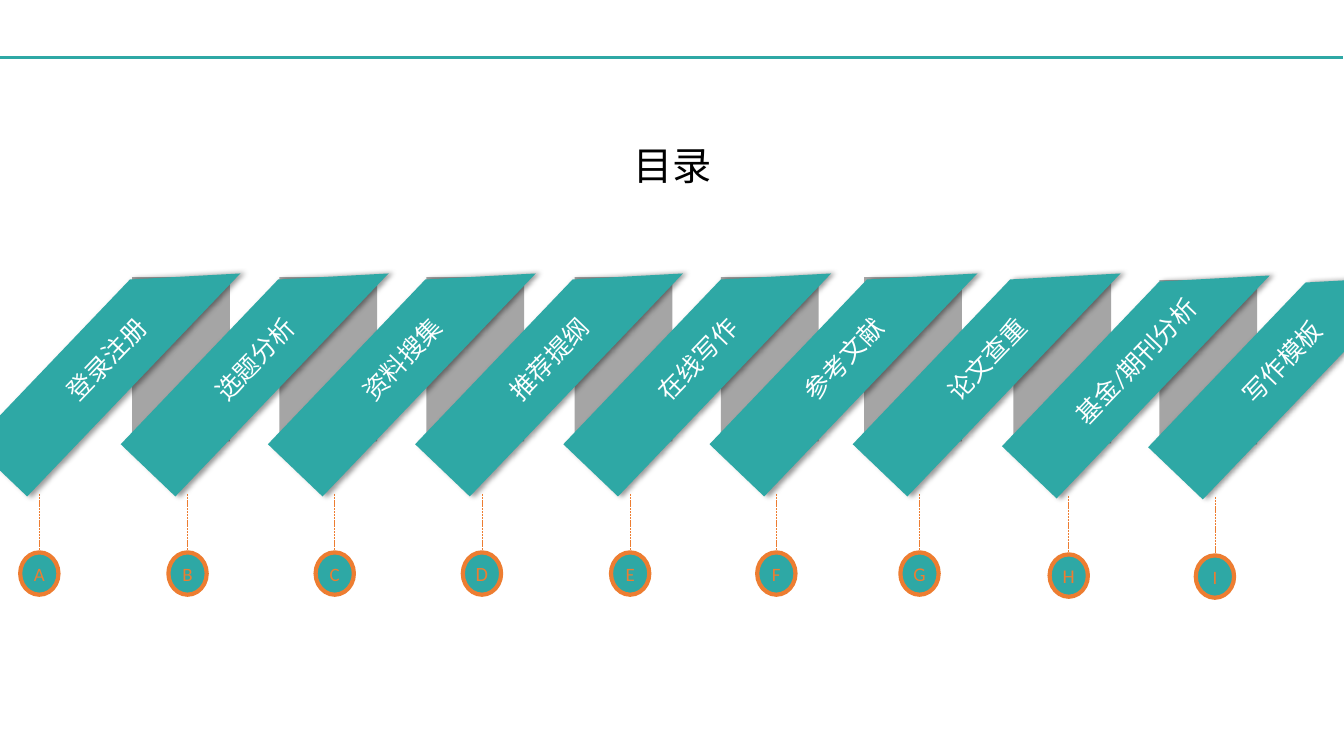
import lxml.etree
import pptx
import pptx.util
import pptx.dml.color
import pptx.enum.dml
import pptx.enum.shapes
import pptx.enum.text
import pptx.oxml.ns

Inches = pptx.util.Inches
Pt = pptx.util.Pt
SHAPE = pptx.enum.shapes.MSO_SHAPE
qn = pptx.oxml.ns.qn

TITLE = "目录"
CHAPTERS = [
    ("A", "登录注册", 0.2, 0, 13.5),
    ("B", "选题分析", 1.67, 0, 13.5),
    ("C", "资料搜集", 3.13, 0, 13.5),
    ("D", "推荐提纲", 4.59, 0, 14.4),
    ("E", "在线写作", 6.06, 0, 13.5),
    ("F", "参考文献", 7.51, 0, 13.5),
    ("G", "论文查重", 8.93, 0, 13.9),
    ("H", "基金/期刊分析", 10.41, 0.02, 13.9),
    ("I", "写作模板", 11.86, 0.03, 13.5),
]
THEME = {
    "font": "Calibri", "teal": "2EA8A5", "orange": "ED7D31", "gray": "A5A5A5",
    "title": "000000", "label": "FEFFFF", "shadow": "000000",
    "title_size": 28, "label_size": 18,
}
STRIP = [(0, 0.8), (0.75, 0), (0.75, 3.06), (0, 3.06)]
STRIP_ANGLE = 43.7


def rgb(name):
    return pptx.dml.color.RGBColor.from_string(THEME[name])


def write(sp, text, size, color):
    tf = sp.text_frame
    tf.text = text
    tf.word_wrap = True
    tf.vertical_anchor = pptx.enum.text.MSO_ANCHOR.MIDDLE
    tf.margin_left = tf.margin_right = tf.margin_top = tf.margin_bottom = 0
    p = tf.paragraphs[0]
    p.alignment = pptx.enum.text.PP_ALIGN.CENTER
    font = p.runs[0].font
    font.name = THEME["font"]
    font.size = Pt(size)
    font.color.rgb = rgb(color)
    return p


def paint(sp, fill, line=None, width=0):
    sp.shadow.inherit = False
    sp.fill.solid()
    sp.fill.fore_color.rgb = rgb(fill)
    if line:
        sp.line.color.rgb = rgb(line)
        sp.line.width = Pt(width)
    else:
        sp.line.fill.background()


def add_line(shapes, x1, y1, x2, y2, color, width):
    ln = shapes.add_connector(pptx.enum.shapes.MSO_CONNECTOR.STRAIGHT,
                              Inches(x1), Inches(y1), Inches(x2), Inches(y2))
    ln.line.color.rgb = rgb(color)
    ln.line.width = Pt(width)
    lxml.etree.SubElement(ln.element.spPr, qn("a:effectLst"))
    return ln


def add_shadow(sp):
    effects = sp.element.spPr.find(qn("a:effectLst"))
    shadow = lxml.etree.SubElement(effects, qn("a:outerShdw"), blurRad=str(Pt(4)),
                                   dist=str(Pt(3)), dir="0", rotWithShape="0")
    color = lxml.etree.SubElement(shadow, qn("a:srgbClr"), val=THEME["shadow"])
    lxml.etree.SubElement(color, qn("a:alpha"), val="40000")


def add_strip(shapes, x, y, text):
    points = [(Inches(x + dx), Inches(y + dy)) for dx, dy in STRIP]
    builder = shapes.build_freeform(*points[0])
    builder.add_line_segments(points[1:], close=True)
    sp = builder.convert_to_shape()
    sp.rotation = STRIP_ANGLE
    paint(sp, "teal")
    add_shadow(sp)
    write(sp, text, THEME["label_size"], "label")
    sp.element.txBody.bodyPr.set("vert", "vert270")


def add_fold(shapes, x, y):
    sp = shapes.add_shape(SHAPE.RECTANGLE, Inches(x), Inches(y), Inches(0.97), Inches(1.63))
    paint(sp, "gray")


def add_chapter(shapes, letter, text, x, dy, size):
    group = shapes.add_group_shape().shapes
    sp = group.add_shape(SHAPE.OVAL, Inches(x), Inches(5.48 + dy), Inches(0.38), Inches(0.42))
    paint(sp, "teal", "orange", 3)
    write(sp, letter, size, "orange")
    stem = add_line(group, x + 0.19, 4.9 + dy, x + 0.19, 5.47 + dy, "orange", 0.5)
    stem.line.dash_style = pptx.enum.dml.MSO_LINE.SQUARE_DOT
    add_strip(group, x + 0.48, 2.03 + dy, text)


def main():
    prs = pptx.Presentation()
    prs.slide_width, prs.slide_height = Inches(13.33), Inches(7.5)
    s = prs.slides.add_slide(prs.slide_layouts[6])
    title = s.shapes.add_textbox(Inches(4.1), Inches(1.12), Inches(5.14), Inches(0.79))
    write(title, TITLE, THEME["title_size"], "title").line_spacing = 1.5
    for _, _, x, dy, _ in CHAPTERS[1:]:
        add_fold(s.shapes, x - 0.36, 2.75 + dy)
    for chapter in CHAPTERS:
        add_chapter(s.shapes, *chapter)
    add_line(s.shapes, 0, 0.57, 13.32, 0.57, "teal", 2.5)
    prs.save("out.pptx")


if __name__ == "__main__":
    main()
